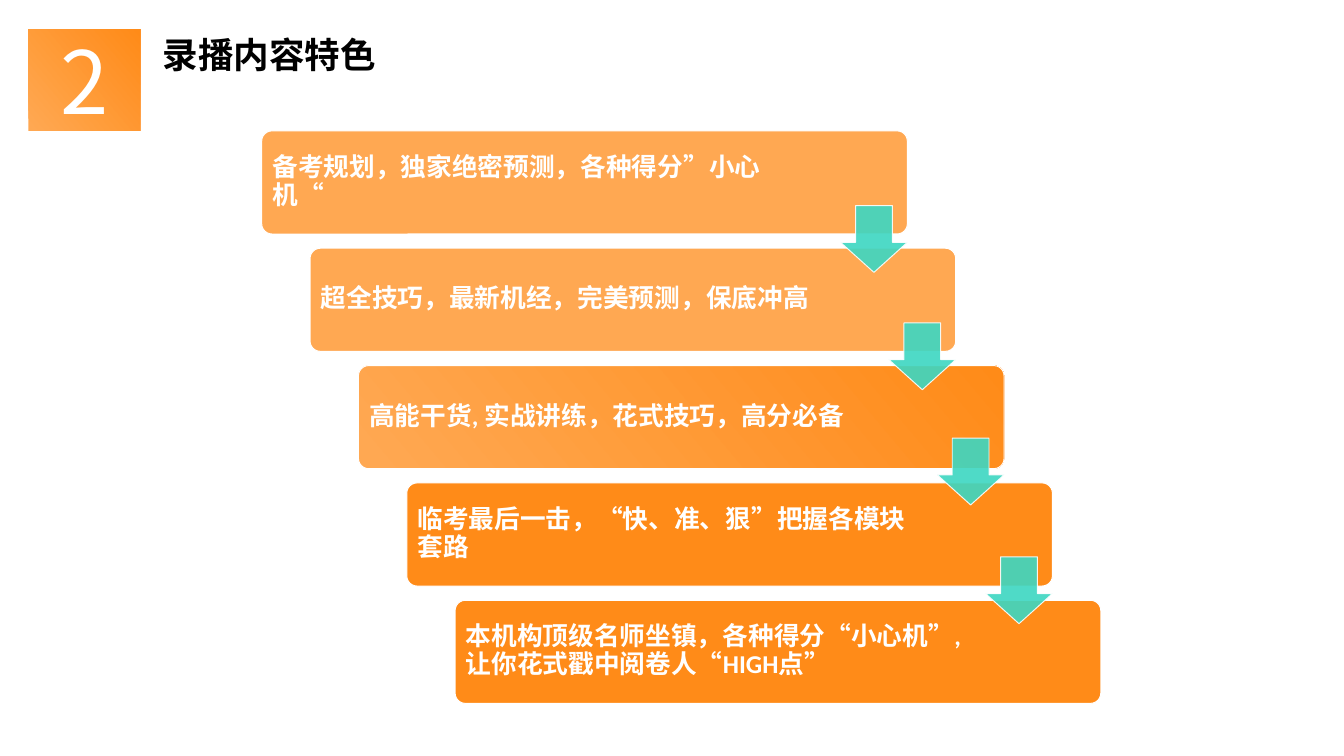
from lxml import etree
from pptx import Presentation
from pptx.dml.color import RGBColor
from pptx.enum import shapes, text
from pptx.oxml import ns
from pptx.util import Inches, Pt

COLORS = {
    "light": "FFA852",
    "deep": "FF8B18",
    "teal": "3CD7C2",
    "white": "FFFFFF",
    "black": "000000",
}
CJK_FONT = "Noto Sans CJK SC"
STEP_X, STEP_Y = 0.68, 1.65
FEATURES = [
    ("备考规划，独家绝密预测，各种得分”小心机“", "light"),
    ("超全技巧，最新机经，完美预测，保底冲高", "light"),
    ("高能干货, 实战讲练，花式技巧，高分必备", "gradient"),
    ("临考最后一击，“快、准、狠”把握各模块套路", "deep"),
    ("本机构顶级名师坐镇，各种得分“小心机”,让你花式戳中阅卷人“HIGH点”", "deep"),
]
ARROW_TOPS = [2.89, 4.54, 6.16, 7.83]


def paint(shape, color):
    shape.shadow.inherit = False
    if color != "gradient":
        shape.fill.solid()
        shape.fill.fore_color.rgb = RGBColor.from_string(COLORS[color])
        return
    shape.fill.gradient()
    shape.fill.gradient_angle = 40
    for stop, name, position in zip(shape.fill.gradient_stops, ("light", "deep"), (0.02, 1)):
        stop.color.rgb = RGBColor.from_string(COLORS[name])
        stop.position = position


def write(shape, wording, size, font, color, bold, inset_x, inset_y):
    frame = shape.text_frame
    frame.word_wrap = True
    frame.margin_left = frame.margin_right = Inches(inset_x)
    frame.margin_top = frame.margin_bottom = Inches(inset_y)
    frame.text = wording
    run = frame.paragraphs[0].runs[0]
    run.font.size = Pt(size)
    run.font.bold = bold
    run.font.color.rgb = RGBColor.from_string(COLORS[color])
    run.font.name = font
    etree.SubElement(run.font._element, ns.qn("a:ea"), typeface=CJK_FONT)
    return frame


presentation = Presentation()
presentation.slide_width = Inches(18.9)
presentation.slide_height = Inches(10.63)
slide = presentation.slides.add_slide(presentation.slide_layouts[6])

for index, (wording, color) in enumerate(FEATURES):
    left, top = 3.68 + index * STEP_X, 1.84 + index * STEP_Y
    card = slide.shapes.add_shape(
        shapes.MSO_SHAPE.ROUNDED_RECTANGLE,
        Inches(left), Inches(top), Inches(9.08), Inches(1.45))
    card.adjustments[0] = 0.1
    paint(card, color)
    card.line.color.rgb = RGBColor.from_string(COLORS["white"])
    card.line.width = Pt(1)

    label = slide.shapes.add_textbox(
        Inches(left + 0.04), Inches(top + 0.04), Inches(7.38), Inches(1.36))
    frame = write(label, wording, 26, "Calibri", "white", True, 0.11, 0.11)
    frame.vertical_anchor = text.MSO_ANCHOR.MIDDLE
    frame.paragraphs[0].line_spacing = 0.9

for index, top in enumerate(ARROW_TOPS):
    arrow = slide.shapes.add_shape(
        shapes.MSO_SHAPE.DOWN_ARROW,
        Inches(11.82 + index * STEP_X), Inches(top), Inches(0.94), Inches(0.94))
    arrow.adjustments[0] = 0.55
    arrow.adjustments[1] = 0.45
    paint(arrow, "teal")
    arrow.line.color.rgb = RGBColor.from_string(COLORS["white"])
    arrow.line.width = Pt(1)
    for color_element in arrow._element.spPr.iter(ns.qn("a:srgbClr")):
        etree.SubElement(color_element, ns.qn("a:alpha"), val="90000")

title = slide.shapes.add_textbox(Inches(2.19), Inches(0.41), Inches(3.5), Inches(0.71))
write(title, "录播内容特色", 36, CJK_FONT, "black", True, 0.1, 0.05)

badge = slide.shapes.add_shape(
    shapes.MSO_SHAPE.RECTANGLE, Inches(0.4), Inches(0.41), Inches(1.57), Inches(1.43))
paint(badge, "gradient")
badge.line.fill.background()
frame = write(badge, "2", 88, CJK_FONT, "white", False, 0.09, 0.04)
frame.vertical_anchor = text.MSO_ANCHOR.MIDDLE
frame.paragraphs[0].alignment = text.PP_ALIGN.CENTER

presentation.save("out.pptx")
